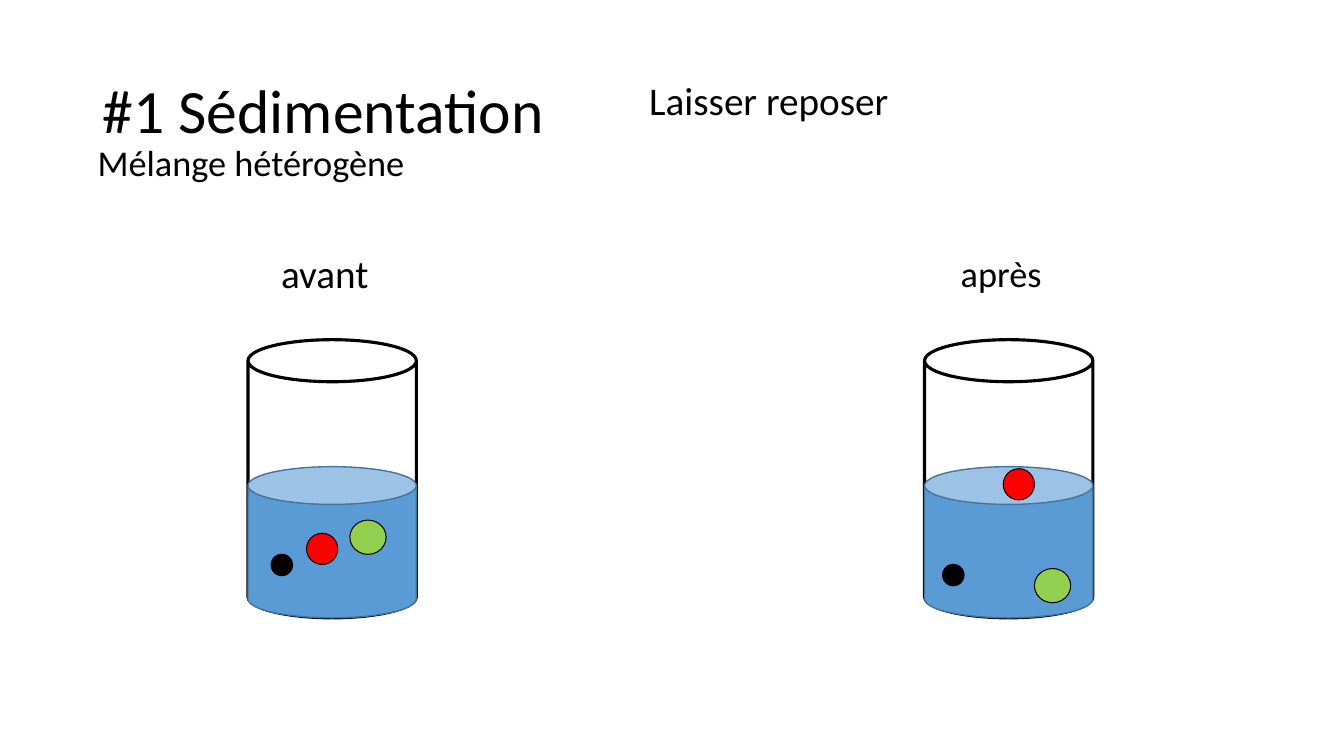
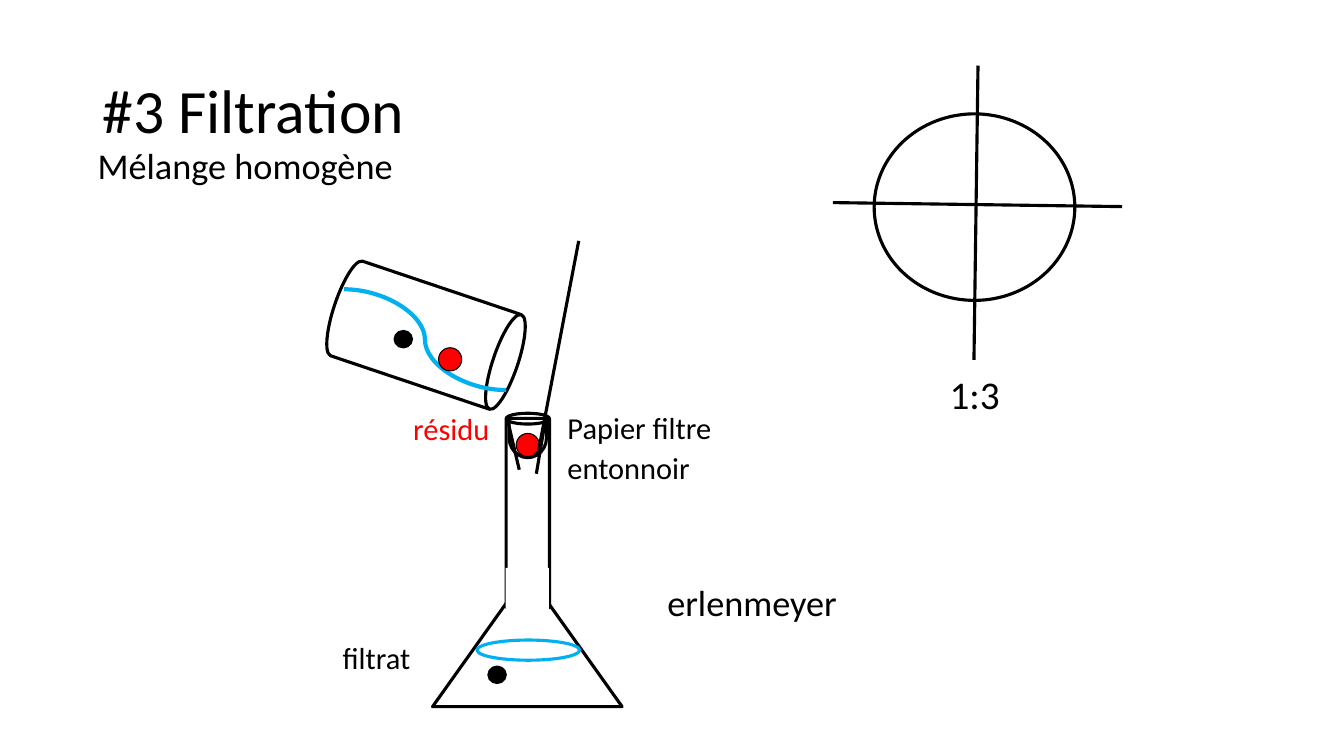
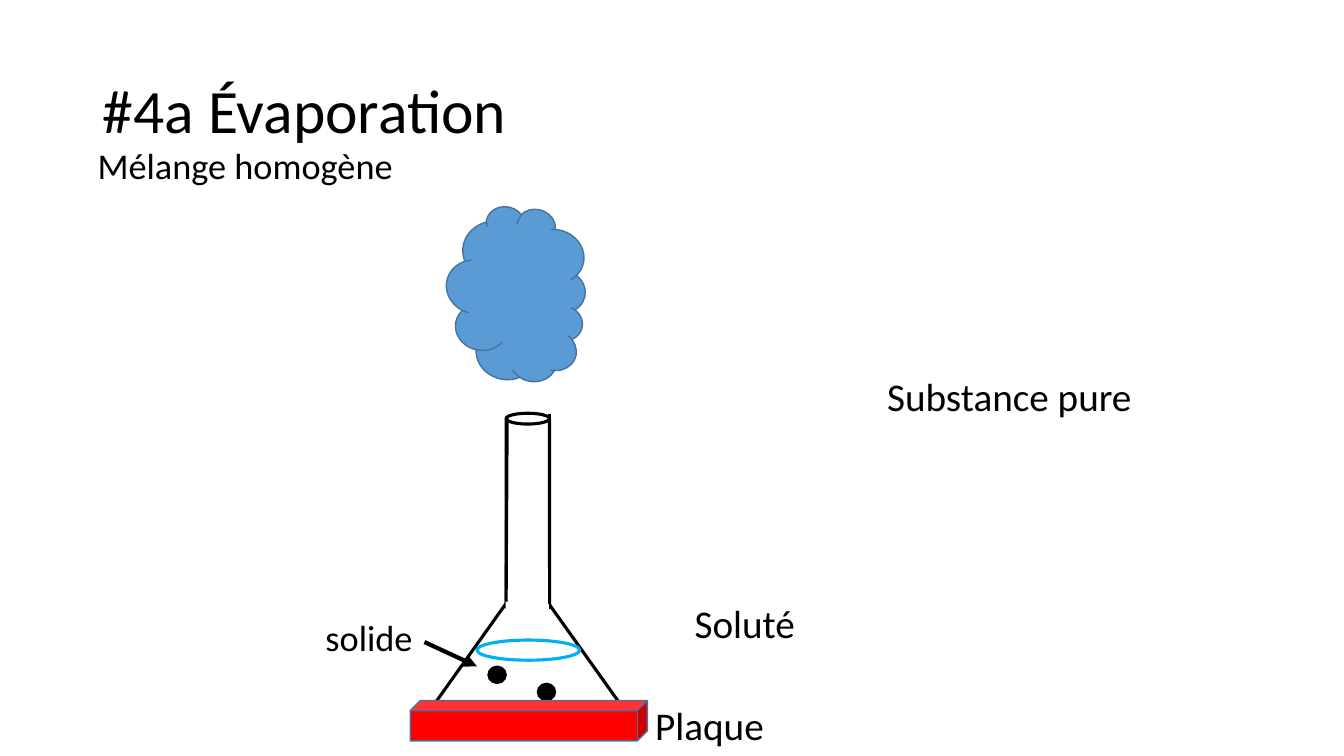
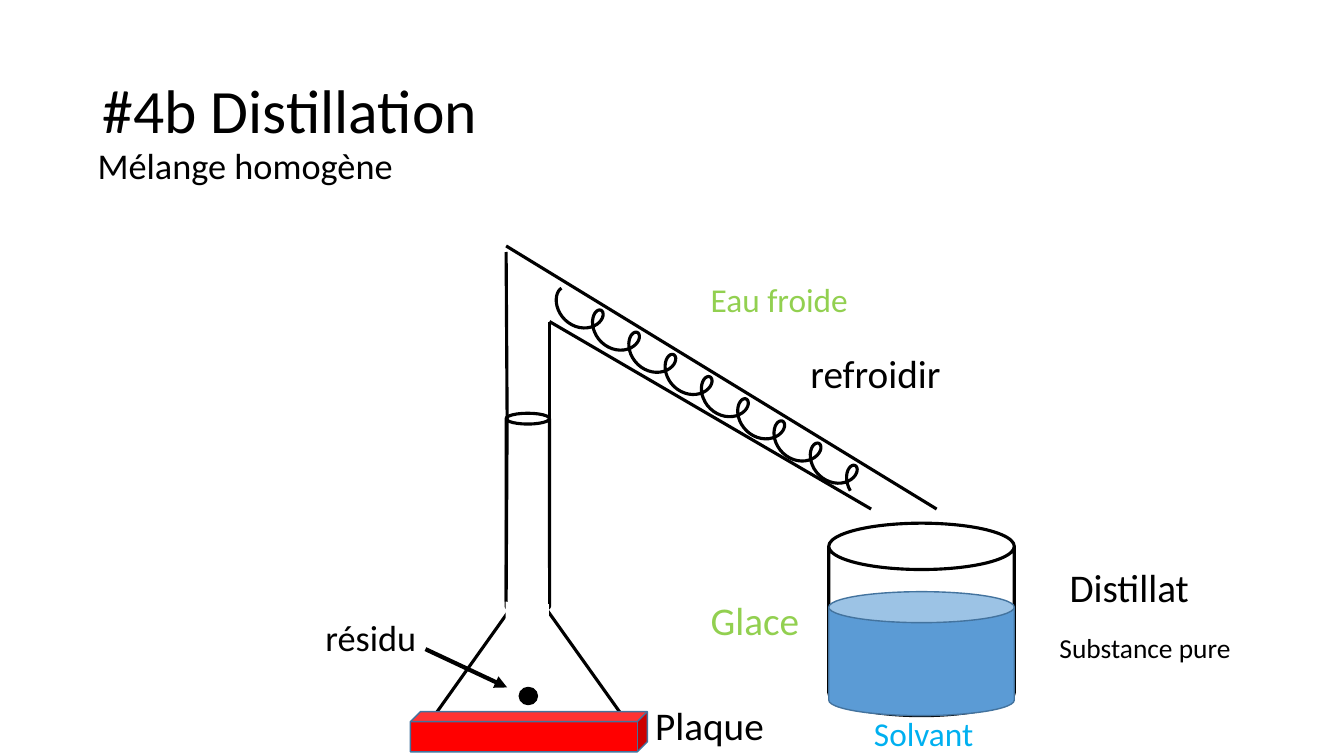
"""Build four slides on the separation of mixtures."""
from dataclasses import dataclass
from math import cos, pi, sin
from typing import Optional

from lxml.etree import SubElement
from pptx import Presentation
from pptx.dml.color import RGBColor
from pptx.enum.shapes import MSO_CONNECTOR, MSO_SHAPE
from pptx.enum.text import MSO_ANCHOR
from pptx.oxml.ns import qn
from pptx.util import Inches, Pt

CAN = MSO_SHAPE.CAN
CLOUD = MSO_SHAPE.CLOUD
CUBE = MSO_SHAPE.CUBE
DELAY = MSO_SHAPE.FLOWCHART_DELAY
OVAL = MSO_SHAPE.OVAL
RECTANGLE = MSO_SHAPE.RECTANGLE
TRIANGLE = MSO_SHAPE.ISOSCELES_TRIANGLE
STRAIGHT = MSO_CONNECTOR.STRAIGHT
CURVE = MSO_CONNECTOR.CURVE
TOP = MSO_ANCHOR.TOP
MIDDLE = MSO_ANCHOR.MIDDLE

FONT = "Calibri"
COLORS = {
    "black": "000000",
    "white": "FFFFFF",
    "red": "FF0000",
    "green": "92D050",
    "water": "5B9BD5",
    "water edge": "43739E",
    "cyan": "00B0F0",
}
TITLE_SIZE = 44
LARGE = 28
MEDIUM = 25.9
COOLING = 23.8
SMALL = 21.7
TINY = 19.6
LOOSE = 0.9
SNUG = 0.8
TIGHT = 0.7
THIN = 1
OUTLINE = 2.25
THICK = 3

HETEROGENEOUS = "Mélange hétérogène"
HOMOGENEOUS = "Mélange homogène"
NECK_LEFT = 5.02
NECK_RIGHT = 5.45
NECK_TOP = 4.1
FLASK_LEFT = 4.29
FLASK_TOP = 5.69


@dataclass(frozen=True)
class Frame:
    """Place and size in inches."""
    left: float
    top: float
    width: float
    height: float

    def lengths(self) -> tuple:
        """Return the frame as slide lengths."""
        return tuple(Inches(value) for value in
                     (self.left, self.top, self.width, self.height))


@dataclass(frozen=True)
class Grain:
    """A kind of particle."""
    width: float
    height: float
    color: str
    weight: float


@dataclass(frozen=True)
class Segment:
    """A stroke between two points."""
    x1: float
    y1: float
    x2: float
    y2: float


@dataclass(frozen=True)
class Label:
    """A caption and its format."""
    text: str
    frame: Frame
    size: float = LARGE
    spacing: float = SNUG
    color: str = "black"


@dataclass(frozen=True)
class Stage:
    """A beaker at one moment, with its caption and particles."""
    beaker_left: float
    caption: Label
    grains: tuple


@dataclass(frozen=True)
class Coil:
    """A circling point that drifts by one step in each turn."""
    center_x: float
    center_y: float
    radius_x: float
    radius_y: float
    step_x: float
    step_y: float
    turns: float
    points_per_turn: int = 30

    def point(self, turn: float) -> tuple:
        """Return the point reached after some turns from the top."""
        angle = pi / 2 + 2 * pi * turn
        x = self.center_x + self.step_x * turn + self.radius_x * cos(angle)
        y = self.center_y + self.step_y * turn - self.radius_y * sin(angle)
        return Inches(x), Inches(y)

    def points(self) -> list:
        """Return points along the whole coil."""
        count = round(self.turns * self.points_per_turn)
        return [self.point(index / self.points_per_turn)
                for index in range(count + 1)]


HEAVY_GRAIN = Grain(0.21, 0.21, "black", THIN)
FLOATING_GRAIN = Grain(0.31, 0.31, "red", 0.75)
SINKING_GRAIN = Grain(0.36, 0.34, "green", 0.75)
DISSOLVED_GRAIN = Grain(0.18, 0.17, "black", THIN)
FILTERED_GRAIN = Grain(0.23, 0.23, "red", 0.75)
COOLING_COIL = Coil(center_x=5.57, center_y=3, radius_x=0.13, radius_y=0.14,
                    step_x=0.36, step_y=0.22, turns=8.3)


def rgb(name: str) -> RGBColor:
    """Look a colour up by name."""
    return RGBColor.from_string(COLORS[name])


def add_text(page, text: str, frame: Frame, *, size: float,
             spacing: float = LOOSE, color: str = "black",
             before: float = 10, anchor=TOP) -> None:
    """Write text, one paragraph a line."""
    box = page.shapes.add_textbox(*frame.lengths()).text_frame
    box.word_wrap = True
    box.vertical_anchor = anchor
    for index, line in enumerate(text.split("\n")):
        para = box.add_paragraph() if index else box.paragraphs[0]
        para.line_spacing = spacing
        para.space_before = Pt(before)
        span = para.add_run()
        span.text = line
        span.font.name = FONT
        span.font.size = Pt(size)
        span.font.color.rgb = rgb(color)


def add_labels(page, *labels: Label) -> None:
    """Write captions."""
    for label in labels:
        add_text(page, label.text, label.frame, size=label.size,
                 spacing=label.spacing, color=label.color)


def paint(shape, fill: Optional[str], line: Optional[str], weight: float) -> None:
    """Set fill and outline and drop the shadow."""
    shape.shadow.inherit = False
    if fill:
        shape.fill.solid()
        shape.fill.fore_color.rgb = rgb(fill)
    else:
        shape.fill.background()
    if line:
        shape.line.color.rgb = rgb(line)
        shape.line.width = Pt(weight)
    else:
        shape.line.fill.background()


def add_figure(page, kind, frame: Frame, *, fill: Optional[str] = None,
               line: Optional[str] = "black", weight: float = OUTLINE,
               rotation: float = 0) -> None:
    """Draw one preset shape."""
    shape = page.shapes.add_shape(kind, *frame.lengths())
    shape.rotation = rotation
    paint(shape, fill, line, weight)


def add_stroke(page, segment: Segment, *, kind=STRAIGHT, color: str = "black",
               weight: float = OUTLINE, arrow: bool = False) -> None:
    """Draw a connector, with an arrowhead on request."""
    stroke = page.shapes.add_connector(
        kind, Inches(segment.x1), Inches(segment.y1),
        Inches(segment.x2), Inches(segment.y2))
    stroke.line.color.rgb = rgb(color)
    stroke.line.width = Pt(weight)
    properties = stroke._element.spPr
    if arrow:
        SubElement(properties.find(qn("a:ln")), qn("a:tailEnd"), type="triangle")
    SubElement(properties, qn("a:effectLst"))


def add_strokes(page, *segments: Segment) -> None:
    """Draw plain black strokes."""
    for segment in segments:
        add_stroke(page, segment)


def add_grains(page, grain: Grain, *places: tuple) -> None:
    """Draw one kind of particle at each left and top."""
    for left, top in places:
        add_figure(page, OVAL, Frame(left, top, grain.width, grain.height),
                   fill=grain.color, weight=grain.weight)


def add_coil(page, coil: Coil) -> None:
    """Draw a coil as one open outline."""
    start, *others = coil.points()
    builder = page.shapes.build_freeform(*start)
    builder.add_line_segments(others, close=False)
    paint(builder.convert_to_shape(), None, "black", OUTLINE)


def add_page(deck, title: str, mixture: str, mixture_top: float = 1.42):
    """Start a slide with its title and kind of mixture."""
    page = deck.slides.add_slide(deck.slide_layouts[6])
    add_text(page, title, Frame(0.92, 0.4, 11.5, 1.45), size=TITLE_SIZE,
             before=0, anchor=MIDDLE)
    add_text(page, mixture, Frame(0.87, mixture_top, 3.35, 0.72), size=MEDIUM)
    return page


def add_beaker(page, glass: Frame, water_top: float) -> None:
    """Draw a beaker partly filled with water."""
    depth = glass.top + glass.height - water_top
    water = Frame(glass.left, water_top, glass.width, depth)
    add_figure(page, CAN, glass, fill="white")
    add_figure(page, CAN, water, fill="water", line="water edge", weight=THIN)


def add_flask(page, base_left: float = FLASK_LEFT, base_top: float = FLASK_TOP,
              surface: bool = True) -> None:
    """Draw an Erlenmeyer flask, with its liquid surface on request."""
    neck = Frame(NECK_LEFT, NECK_TOP, NECK_RIGHT - NECK_LEFT, 1.97)
    add_figure(page, CAN, neck, fill="white")
    add_figure(page, TRIANGLE, Frame(base_left, base_top, 1.88, 1.32))
    add_figure(page, RECTANGLE, Frame(4.9, 5.75, 0.66, 0.43), fill="white",
               line=None, rotation=90)
    if surface:
        add_figure(page, OVAL, Frame(4.73, 6.35, 1.02, 0.2), line="cyan")


def add_heating(page, plate_top: float, solid: str, pointer: Segment) -> None:
    """Add the neck sides, the hot plate and the named solid."""
    add_strokes(page,
                Segment(NECK_LEFT + 0.01, 4.13, NECK_LEFT, 5.97),
                Segment(NECK_RIGHT, 4.11, NECK_RIGHT, 5.99))
    add_figure(page, CUBE, Frame(4.07, plate_top, 2.35, 0.4), fill="red",
               line="water edge", weight=THIN)
    add_labels(page,
               Label("Plaque", Frame(6.4, 7, 1.61, 0.5)),
               Label(solid, Frame(3.13, 6.14, 1.17, 0.47), MEDIUM))
    add_stroke(page, pointer, weight=THICK, arrow=True)


def add_condenser(page) -> None:
    """Draw the sloping tube that leaves the neck, with its coil."""
    outer_top, inner_top, outlet = 2.44, 3.19, 5.05
    add_strokes(page,
                Segment(NECK_LEFT, outer_top + 0.06, NECK_LEFT + 0.01, 4.19),
                Segment(NECK_RIGHT, inner_top, NECK_RIGHT, 4.19),
                Segment(NECK_RIGHT, inner_top, 8.64, outlet),
                Segment(NECK_LEFT, outer_top, 9.29, outlet))
    add_coil(page, COOLING_COIL)


def build_sedimentation(deck) -> None:
    """Show a mixture before and after it settles."""
    page = add_page(deck, "#1 Sédimentation", HETEROGENEOUS, 1.39)
    add_labels(page, Label("Laisser reposer", Frame(6.34, 0.76, 3.35, 0.72),
                           spacing=LOOSE))
    before = Stage(
        2.46, Label("avant", Frame(2.69, 2.48, 1.24, 0.72), LARGE, LOOSE),
        ((HEAVY_GRAIN, (2.69, 5.5)), (FLOATING_GRAIN, (3.04, 5.29)),
         (SINKING_GRAIN, (3.47, 5.16))))
    after = Stage(
        9.17, Label("après", Frame(9.43, 2.49, 1.01, 0.72), MEDIUM, LOOSE),
        ((HEAVY_GRAIN, (9.35, 5.6)), (FLOATING_GRAIN, (9.95, 4.65)),
         (SINKING_GRAIN, (10.26, 5.64))))
    for stage in (before, after):
        add_beaker(page, Frame(stage.beaker_left, 3.37, 1.67, 2.76), 4.63)
        add_labels(page, stage.caption)
        for grain, place in stage.grains:
            add_grains(page, grain, place)


def build_filtration(deck) -> None:
    """Show a mixture poured through a filter."""
    page = add_page(deck, "#3 Filtration", HOMOGENEOUS)
    add_figure(page, CAN, Frame(3.73, 2.37, 0.99, 1.91), fill="white",
               rotation=108.6)
    add_stroke(page, Segment(3.41, 2.87, 5.02, 3.87), kind=CURVE,
               color="cyan", weight=THICK)
    add_flask(page)
    add_figure(page, DELAY, Frame(5.04, 4.16, 0.39, 0.37), rotation=90)
    add_grains(page, DISSOLVED_GRAIN, (3.91, 3.28), (4.84, 6.61))
    add_grains(page, FILTERED_GRAIN, (4.35, 3.45), (5.12, 4.3))
    stirring_rod = Segment(5.74, 2.39, 5.33, 4.53)
    funnel_left = Segment(5.04, 4.19, 5.15, 4.66)
    funnel_right = Segment(5.41, 4.16, 5.32, 4.7)
    add_strokes(page, stirring_rod, funnel_left, funnel_right)
    add_figure(page, OVAL, Frame(8.67, 1.13, 1.99, 1.85))
    vertical_fold = Segment(9.7, 0.65, 9.66, 3.57)
    horizontal_fold = Segment(8.26, 2.01, 11.13, 2.05)
    add_strokes(page, vertical_fold, horizontal_fold)
    add_labels(
        page,
        Label("résidu", Frame(4, 4.12, 1.08, 0.4), SMALL, TIGHT, "red"),
        Label("filtrat", Frame(3.3, 6.39, 1.08, 0.4), SMALL, TIGHT),
        Label("erlenmeyer", Frame(6.52, 5.76, 2.01, 0.79), MEDIUM, LOOSE),
        Label("Papier filtre\nentonnoir", Frame(5.53, 4.11, 2.01, 0.79),
              SMALL, TIGHT),
        Label("1:3", Frame(9.32, 3.68, 0.97, 0.79), LARGE, LOOSE))


def build_evaporation(deck) -> None:
    """Show a solution heated until the solid remains."""
    page = add_page(deck, "#4a Évaporation", HOMOGENEOUS)
    add_flask(page)
    add_grains(page, DISSOLVED_GRAIN, (4.84, 6.61), (5.33, 6.78))
    add_figure(page, CLOUD, Frame(4.27, 2.21, 1.72, 1.41), fill="water",
               line="water edge", weight=THIN, rotation=102.3)
    add_heating(page, 6.95, "solide", Segment(4.21, 6.37, 4.73, 6.61))
    add_labels(
        page,
        Label("Soluté", Frame(6.79, 5.95, 2.01, 0.79), LARGE, LOOSE),
        Label("Substance pure", Frame(8.7, 3.7, 2.97, 0.79), LARGE, LOOSE))


def build_distillation(deck) -> None:
    """Show vapour cooled and collected in a beaker."""
    page = add_page(deck, "#4b Distillation", HOMOGENEOUS)
    add_flask(page, FLASK_LEFT + 0.01, FLASK_TOP + 0.1, surface=False)
    add_grains(page, DISSOLVED_GRAIN, (5.15, 6.82))
    add_heating(page, 7.06, "résidu", Segment(4.22, 6.44, 5.03, 6.82))
    add_condenser(page)
    add_beaker(page, Frame(8.22, 5.19, 1.84, 1.91), 5.87)
    add_labels(
        page,
        Label("Eau froide", Frame(6.95, 2.8, 1.61, 0.52), COOLING, color="green"),
        Label("refroidir", Frame(7.94, 3.51, 1.61, 0.52)),
        Label("Glace", Frame(6.95, 5.96, 1.26, 0.52), color="green"),
        Label("Solvant", Frame(8.57, 7.1, 1.26, 0.4), COOLING, color="cyan"),
        Label("Distillat", Frame(10.51, 5.63, 1.61, 0.52)),
        Label("Substance pure", Frame(10.41, 6.3, 2, 0.52), TINY, TIGHT))


def main() -> None:
    """Build and save the deck."""
    deck = Presentation()
    deck.slide_width = Inches(13.33)
    deck.slide_height = Inches(7.5)
    for build in (build_sedimentation, build_filtration,
                  build_evaporation, build_distillation):
        build(deck)
    deck.save("out.pptx")


if __name__ == "__main__":
    main()
